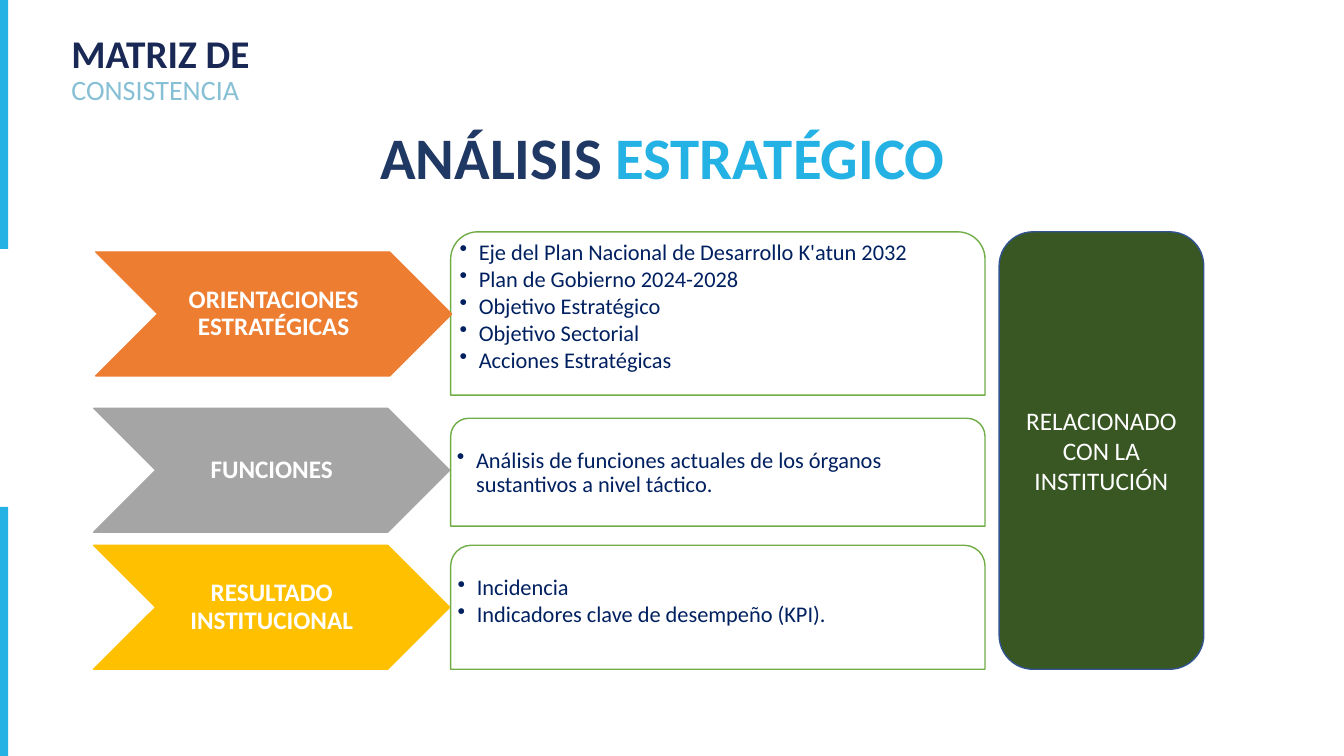
from lxml.etree import SubElement
from pptx import Presentation
from pptx.dml.color import RGBColor
from pptx.enum.shapes import MSO_SHAPE as SHAPE
from pptx.enum.text import MSO_ANCHOR as ANCHOR, PP_ALIGN as ALIGN
from pptx.oxml.ns import qn
from pptx.util import Inches, Pt

NAVY, CYAN, WHITE = "203864", "23B2E3", "FFFFFF"

ROWS = [
    ("ORIENTACIONES ESTRATÉGICAS", "ED7D31", (0.95, 2.5), (2.3, 1.62), 0.01, [
        "Eje del Plan Nacional de Desarrollo K'atun 2032",
        "Plan de Gobierno 2024-2028",
        "Objetivo Estratégico",
        "Objetivo Sectorial",
        "Acciones Estratégicas",
    ]),
    ("FUNCIONES", "A5A5A5", (0.93, 4.05), (4.15, 1.07), 0.25, [
        "Análisis de funciones actuales de los órganos sustantivos a nivel táctico.",
    ]),
    ("RESULTADO INSTITUCIONAL", "FFC000", (0.93, 5.41), (5.41, 1.23), 0.25, [
        "Incidencia",
        "Indicadores clave de desempeño (KPI).",
    ]),
]


def rgb(color):
    return RGBColor.from_string(color)


class Deck:
    font = "Calibri"

    def __init__(self):
        self.prs = Presentation()
        self.prs.slide_width = Inches(13.33)
        self.prs.slide_height = Inches(7.5)
        self.s = self.prs.slides.add_slide(self.prs.slide_layouts[6])

    def shape(self, kind, x, y, w, h, fill, line=None):
        sp = self.s.shapes.add_shape(kind, Inches(x), Inches(y), Inches(w), Inches(h))
        sp.shadow.inherit = False
        sp.fill.solid()
        sp.fill.fore_color.rgb = rgb(fill)
        if line:
            sp.line.color.rgb = rgb(line)
            sp.line.width = Pt(1)
        else:
            sp.line.fill.background()
        return sp

    def box(self, x, y, w, h):
        return self.s.shapes.add_textbox(Inches(x), Inches(y), Inches(w), Inches(h))

    def frame(self, sp, anchor=ANCHOR.MIDDLE, insets=(0.1, 0.05, 0.1, 0.05)):
        tf = sp.text_frame
        tf.word_wrap = True
        tf.vertical_anchor = anchor
        tf.margin_left, tf.margin_top, tf.margin_right, tf.margin_bottom = map(Inches, insets)
        return tf

    def text(self, tf, paragraphs, align=ALIGN.LEFT, spacing=0.9):
        for i, runs in enumerate(paragraphs):
            p = tf.add_paragraph() if i else tf.paragraphs[0]
            p.alignment = align
            p.line_spacing = spacing
            for words, size, color, bold in runs:
                r = p.add_run()
                r.text = words
                r.font.name = self.font
                r.font.size = Pt(size)
                r.font.color.rgb = rgb(color)
                r.font.bold = bold

    def bullets(self, tf, items):
        self.text(tf, [[(item, 16, "002060", False)] for item in items])
        for p in tf.paragraphs:
            p.space_after = Pt(2)
            pPr = p._p.get_or_add_pPr()
            pPr.set("marL", str(Inches(0.19)))
            pPr.set("indent", str(-Inches(0.19)))
            SubElement(pPr, qn("a:buChar")).set("char", "•")


def main():
    deck = Deck()

    for y in (0, 5.03):
        deck.shape(SHAPE.RECTANGLE, 0, y, 0.08, 2.47, CYAN)

    title = deck.frame(deck.box(2.93, 0.36, 7.28, 2.46))
    deck.text(title, [[("ANÁLISIS", 42, NAVY, True),
                       (" ESTRATÉGICO", 42, CYAN, True)]], ALIGN.CENTER)

    section = deck.frame(deck.box(0.61, 0.34, 4.86, 0.72))
    deck.text(section, [[("MATRIZ DE", 28, "192854", True)],
                        [("CONSISTENCIA", 20, "87C0D5", False)]])

    for label, color, (arrow_x, arrow_y), (y, h), top, items in ROWS:
        panel = deck.shape(SHAPE.ROUND_2_SAME_RECTANGLE, 4.47, y, 5.3, h, WHITE, "70AD47")
        deck.bullets(deck.frame(panel, ANCHOR.TOP, (0.01, top, 0.01, 0.01)), items)
        arrow = deck.shape(SHAPE.CHEVRON, arrow_x, arrow_y, 3.53, 1.23, color, color)
        tf = deck.frame(arrow, insets=(0.07, 0.04, 0.07, 0.04))
        deck.text(tf, [[(label, 18, WHITE, True)]], ALIGN.CENTER)

    scope = deck.shape(SHAPE.ROUNDED_RECTANGLE, 9.91, 2.3, 2.03, 4.34, "385723", "325491")
    deck.text(deck.frame(scope), [[("RELACIONADO CON LA INSTITUCIÓN", 18, WHITE, False)]],
              ALIGN.CENTER, 1.0)

    deck.prs.save("out.pptx")


if __name__ == "__main__":
    main()
